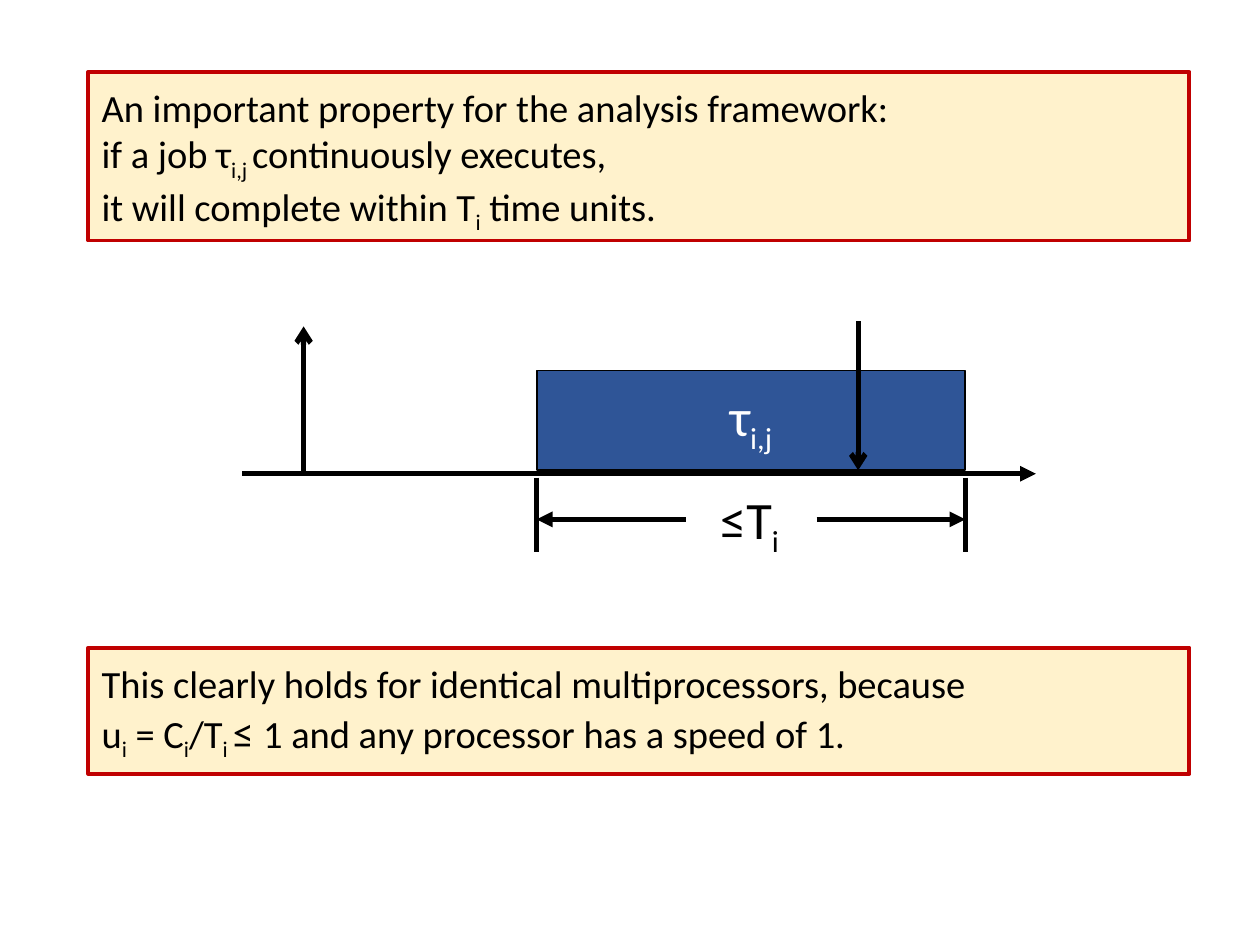
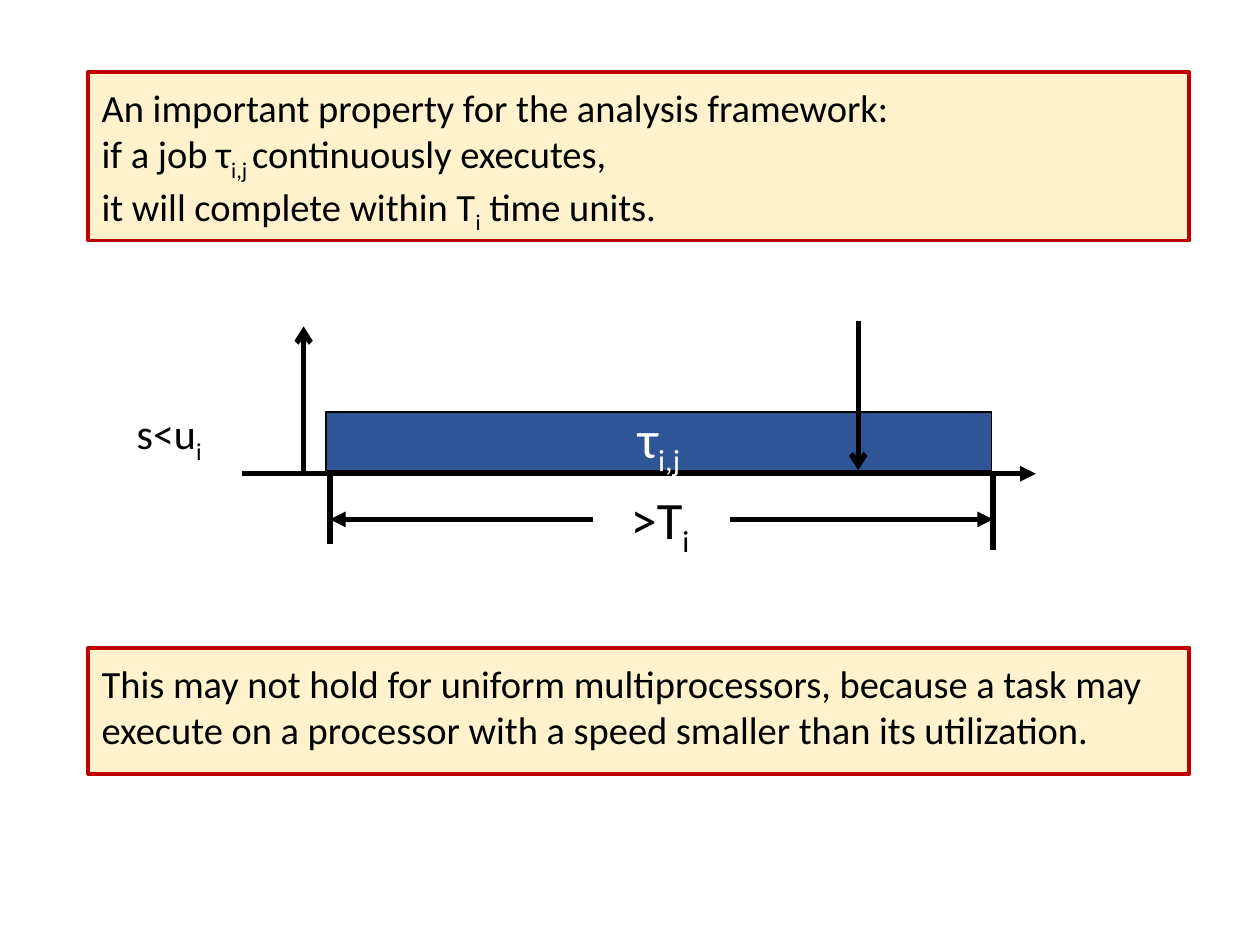
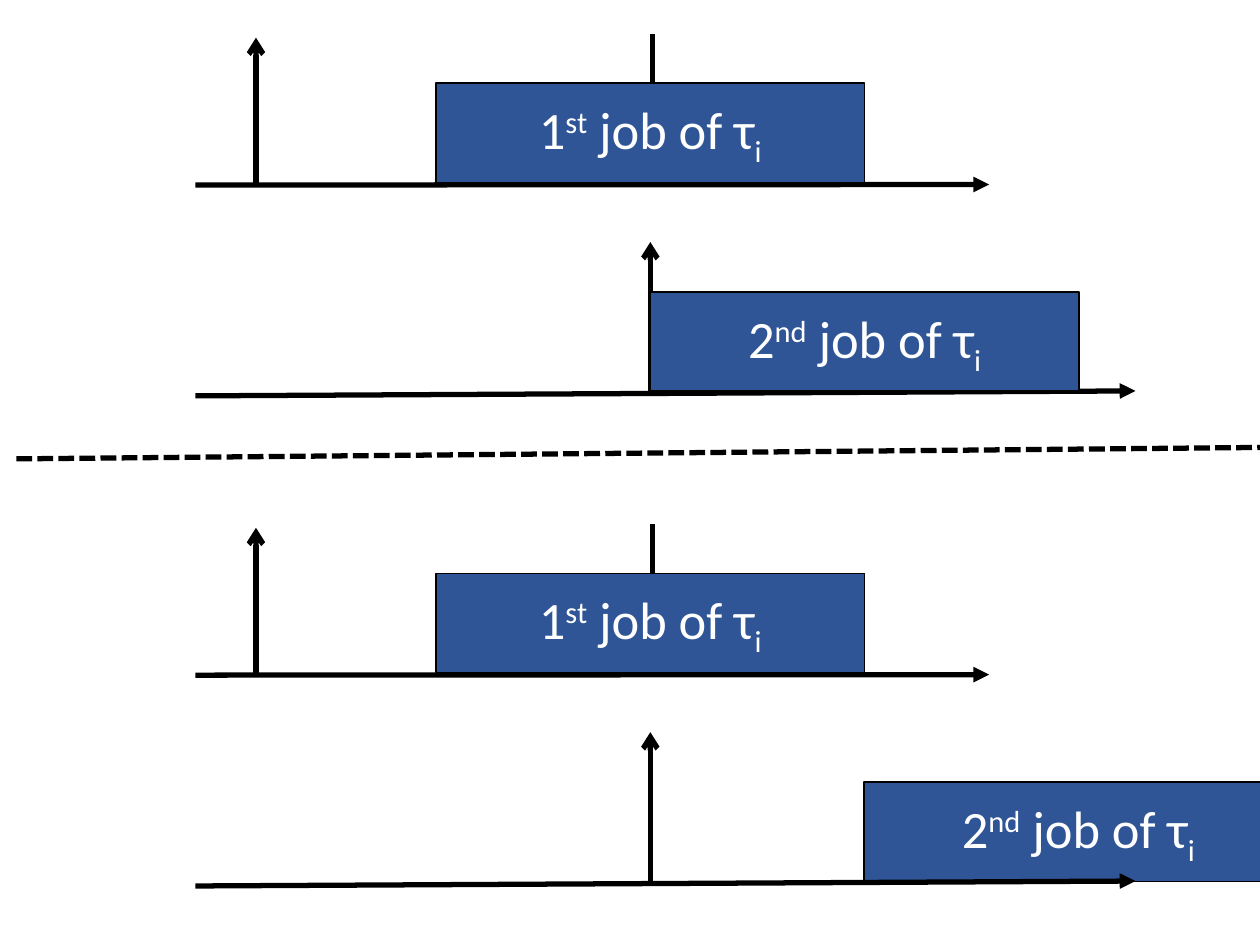
from lxml import etree
from pptx import Presentation, util as u
from pptx.dml.color import RGBColor
from pptx.enum import dml, shapes, text
from pptx.oxml.ns import qn

# Shared look
FONT = "Calibri"
BLACK, WHITE, JOB_BLUE = "000000", "FFFFFF", "2F5597"
NOTE_FILL, NOTE_EDGE = "FFF2CC", "C00000"
LINE_WIDTH = 3
JOB_WIDTH, JOB_HEIGHT = 8.64, 2.0
ARROW_HEIGHT = 3.0
SUB, SUPER = -25, 30

# Wording: plain strings, or (text, baseline, size) for special runs
TASK_JOB = ["τ", ("i,j", SUB)]
FIRST_JOB = ["1", ("st", SUPER), " job of τ", ("i", SUB)]
SECOND_JOB = ["2", ("nd", SUPER), " job of τ", ("i", SUB)]
PROPERTY = [
    ["An important property for the analysis framework:"],
    ["if a job τ", ("i,j ", SUB), "continuously executes,"],
    ["it will complete within T", ("i", SUB), " time units."],
]
IDENTICAL = [
    ["This clearly holds for identical multiprocessors, because"],
    ["u", ("i", SUB), " = C", ("i", SUB), "/T", ("i ", SUB), ("≤ ", 0, 24),
     "1 and any processor has a speed of 1."],
]
UNIFORM = [["This may not hold for uniform multiprocessors, because a task may "
            "execute on a processor with a speed smaller than its utilization."]]


def rgb(value):
    return RGBColor.from_string(value)


def write(frame, lines, size, color=BLACK, align=text.PP_ALIGN.LEFT):
    """Fill a text frame, one paragraph for each list of parts."""
    for number, parts in enumerate(lines):
        paragraph = frame.add_paragraph() if number else frame.paragraphs[0]
        paragraph.alignment = align
        paragraph.font.name = FONT
        paragraph.font.size = u.Pt(size)
        paragraph.font.color.rgb = rgb(color)
        for part in parts:
            wording, baseline, *special = (part, 0) if isinstance(part, str) else part
            run = paragraph.add_run()
            run.text = wording
            if special:
                run.font.size = u.Pt(special[0])
            if baseline:
                run._r.get_or_add_rPr().set("baseline", str(baseline * 1000))


def box(slide, left, top, width, height, fill, edge, edge_width):
    rect = slide.shapes.add_shape(shapes.MSO_SHAPE.RECTANGLE,
                                  u.Cm(left), u.Cm(top), u.Cm(width), u.Cm(height))
    rect.shadow.inherit = False
    rect.fill.solid()
    rect.fill.fore_color.rgb = rgb(fill)
    rect.line.color.rgb = rgb(edge)
    rect.line.width = u.Pt(edge_width)
    return rect


def label(slide, left, top, width, height, lines, size,
          wrap=False, align=text.PP_ALIGN.LEFT):
    frame = slide.shapes.add_textbox(u.Cm(left), u.Cm(top),
                                     u.Cm(width), u.Cm(height)).text_frame
    frame.word_wrap = wrap
    frame.auto_size = text.MSO_AUTO_SIZE.SHAPE_TO_FIT_TEXT
    write(frame, lines, size, align=align)


def line(slide, start, end, head=None, tail=None, dash=None):
    """Straight line; head is the arrowhead at start, tail the one at end."""
    ends = [u.Cm(value) for value in (*start, *end)]
    stroke = slide.shapes.add_connector(shapes.MSO_CONNECTOR.STRAIGHT, *ends)
    stroke.line.color.rgb = rgb(BLACK)
    stroke.line.width = u.Pt(LINE_WIDTH)
    if dash:
        stroke.line.dash_style = dash
    properties = stroke._element.spPr
    outline = properties.find(qn("a:ln"))
    for tag, kind in (("a:headEnd", head), ("a:tailEnd", tail)):
        if kind:
            etree.SubElement(outline, qn(tag)).set("type", kind)
    etree.SubElement(properties, qn("a:effectLst"))


def note(slide, top, height, text_height, lines):
    box(slide, 1.78, top, 22.2, height, NOTE_FILL, NOTE_EDGE, 2.25)
    label(slide, 1.8, top + 0.12, 22.2, text_height, lines, 22, wrap=True)


def job(slide, left, top, wording, width=JOB_WIDTH, height=JOB_HEIGHT):
    block = box(slide, left, top, width, height, JOB_BLUE, BLACK, 1)
    block.text_frame.vertical_anchor = text.MSO_ANCHOR.MIDDLE
    write(block.text_frame, [wording], 30, WHITE, text.PP_ALIGN.CENTER)


def time_axis(slide, start, end):
    line(slide, start, end, tail="triangle")


def release(slide, x, top):
    line(slide, (x, top), (x, top + ARROW_HEIGHT), head="arrow")


def deadline(slide, x, top):
    line(slide, (x, top), (x, top + ARROW_HEIGHT), tail="arrow")


def duration(slide, left, right, tick_tops, arrow_length, wording):
    """Two ticks with arrows pointing out to them from a centred label."""
    y = 10.47
    label(slide, (left + right) / 2 - 0.87, 9.7, 1.73, 1.55, [wording], 30)
    for x, top in zip((left, right), tick_tops):
        line(slide, (x, top), (x, top + 1.5))
    line(slide, (right - arrow_length, y), (right, y), tail="triangle")
    line(slide, (left, y), (left + arrow_length, y), head="triangle")


def property_slide(slide, block, span, conclusion, conclusion_height):
    """Property, schedule of one job, and what follows for the platform."""
    left, top, width, height = block
    note(slide, 1.45, 3.4, 3.07, PROPERTY)
    time_axis(slide, (4.88, 9.55), (20.88, 9.55))
    release(slide, 6.12, 6.58)
    job(slide, left, top, TASK_JOB, width, height)
    deadline(slide, 17.3, 6.48)
    duration(slide, *span)
    note(slide, 13.06, 2.54, conclusion_height, conclusion)


def two_jobs(slide, top, second_left, delayed=False):
    """Two consecutive jobs, each on its own time axis."""
    second = (slide, second_left, top + 5.2, SECOND_JOB)
    if delayed:
        job(*second)
    deadline(slide, 13.16, top)
    time_axis(slide, (3.94, top + 3.04), (19.94, top + 3.03))
    release(slide, 5.16, top + 0.07)
    job(slide, 8.79, top + 0.99, FIRST_JOB)
    time_axis(slide, (3.94, top + 7.29), (22.89, top + 7.19))
    release(slide, 13.11, top + 4.19)
    if not delayed:
        job(*second)


def main():
    deck = Presentation()
    deck.slide_width, deck.slide_height = u.Cm(25.4), u.Cm(19.05)
    identical, uniform, successive = (
        deck.slides.add_slide(deck.slide_layouts[6]) for _ in range(3))

    # Identical multiprocessors: the job fits in its period
    property_slide(identical, (10.82, 7.47, JOB_WIDTH, JOB_HEIGHT),
                   (10.82, 19.46, (9.63, 9.63), 3.0, ["≤T", ("i", SUB)]),
                   IDENTICAL, 2.24)

    # Uniform multiprocessors: a slow processor stretches the job
    property_slide(uniform, (6.58, 8.31, 13.41, 1.19),
                   (6.65, 20.02, (9.47, 9.58), 5.3, [">T", ("i", SUB)]),
                   UNIFORM, 2.13)
    label(uniform, 2.41, 8.1, 2.0, 1.27, [["s<u", ("i", SUB)]], 24,
          align=text.PP_ALIGN.CENTER)

    # Second job starting at its release, and after the first job
    two_jobs(successive, 0.69, 13.11)
    two_jobs(successive, 10.57, 17.42, delayed=True)
    line(successive, (0.33, 9.25), (25.4, 9.02), dash=dml.MSO_LINE.SQUARE_DOT)

    deck.save("out.pptx")


if __name__ == "__main__":
    main()
